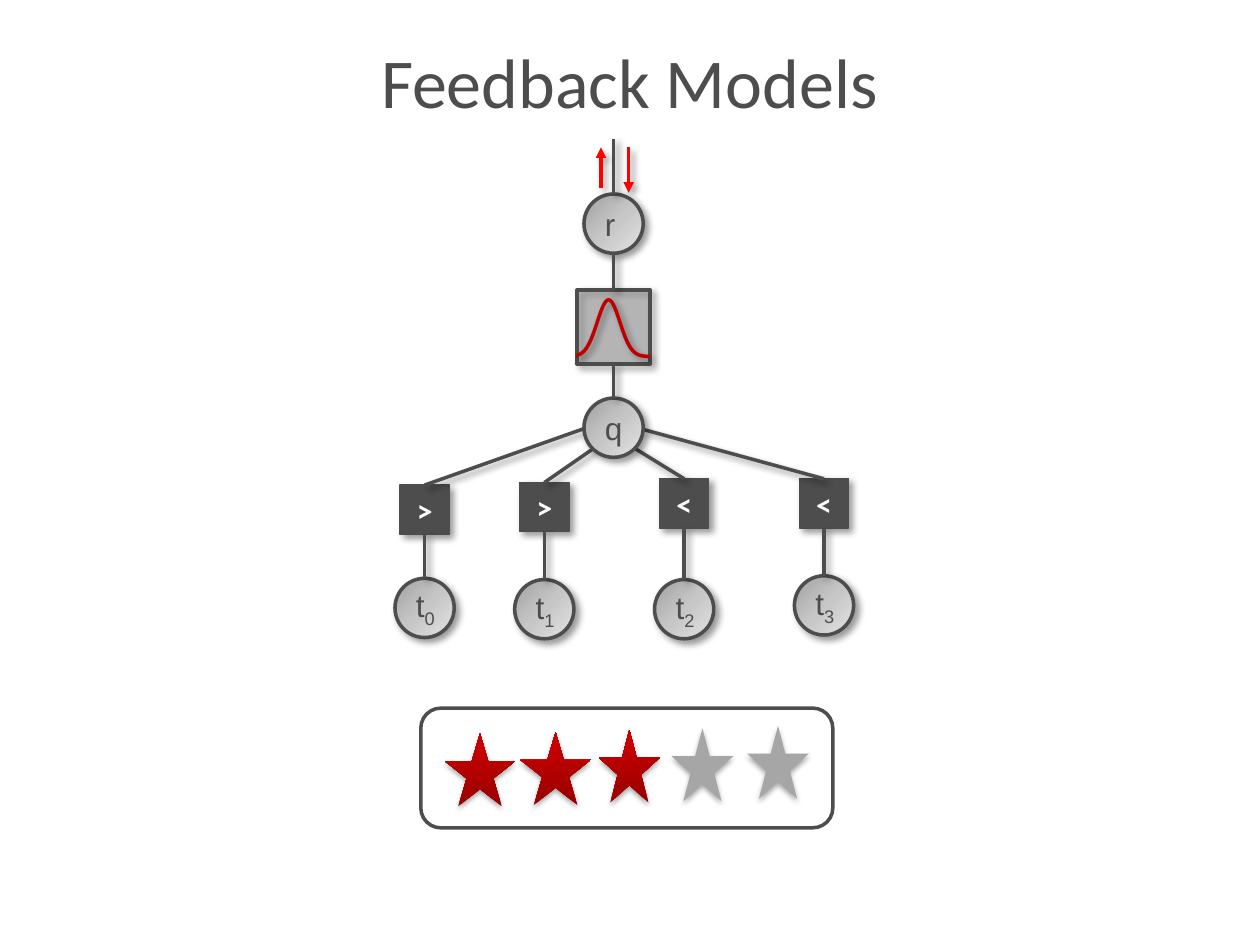
from math import exp

from lxml import etree
from pptx import Presentation
from pptx.dml.color import RGBColor
from pptx.enum.shapes import MSO_CONNECTOR, MSO_SHAPE
from pptx.enum.text import MSO_ANCHOR, PP_ALIGN
from pptx.oxml.ns import qn
from pptx.util import Inches, Pt

STRAIGHT = MSO_CONNECTOR.STRAIGHT
OVAL, BOX, STAR, PANEL = (MSO_SHAPE.OVAL, MSO_SHAPE.RECTANGLE,
                          MSO_SHAPE.STAR_5_POINT, MSO_SHAPE.ROUNDED_RECTANGLE)
LEFT, CENTER, MIDDLE = PP_ALIGN.LEFT, PP_ALIGN.CENTER, MSO_ANCHOR.MIDDLE
TOP, BOTTOM = 0, 2

# Content
TITLE = "Feedback Models"
# subscript, comparison, column centre, box top, circle top, line end at q
BRANCHES = [
    ("0", ">", 3.37, 3.85, 4.59, (4.64, 3.40)),
    ("1", ">", 4.32, 3.83, 4.60, (4.71, 3.56)),
    ("2", "<", 5.43, 3.80, 4.60, (5.04, 3.56)),
    ("3", "<", 6.54, 3.80, 4.57, (5.11, 3.41)),
]
# left, top, width, filled
STARS = [(3.53, 5.82, 0.56, True), (4.13, 5.81, 0.56, True), (4.75, 5.79, 0.49, True),
         (5.33, 5.78, 0.49, False), (5.93, 5.76, 0.49, False)]
# tip, tail end
MESSAGES = [((4.99, 1.53), (4.99, 1.17)), ((4.77, 1.17), (4.77, 1.49))]

# Look
DARK, WHITE, RED, CURVE, GREY = "4D4D4D", "FFFFFF", "FF0000", "C00000", "A6A6A6"
SILVER = ([(0, "A1A1A1"), (50, "C6C6C6"), (100, "E3E3E3")], 45)
CRIMSON = ([(0, "980000"), (80, "C60000"), (100, "C70000")], 270)
NODE_SHADOW = {"alpha": 40, "blur": 4, "distance": 3, "angle": 45}
STAR_SHADOW = {"alpha": 35, "blur": 3.1, "distance": 1.8, "angle": 90}
NODE_FONT = {"name": "Arial", "size": Pt(18)}
BOX_FONT = {"name": "Calibri", "size": Pt(18), "bold": True}
TITLE_FONT = {"name": "Calibri", "size": Pt(40)}
AXIS, CIRCLE, SQUARE, STAR_HEIGHT = 4.87, 0.47, 0.39, 0.58


def color(value):
    return RGBColor.from_string(value)


def add_child(parent, tag, **attributes):
    child = etree.SubElement(parent, qn(tag))
    for name, value in attributes.items():
        child.set(name, str(value))
    return child


def set_shadow(shape, alpha, blur, distance, angle):
    effects = add_child(shape._element.spPr, "a:effectLst")
    outer = add_child(effects, "a:outerShdw", blurRad=Pt(blur), dist=Pt(distance),
                      dir=angle * 60000, algn="tl", rotWithShape=0)
    shade = add_child(outer, "a:srgbClr", val="000000")
    add_child(shade, "a:alpha", val=alpha * 1000)


def set_gradient(shape, stops, angle):
    shape.fill.gradient()
    shape.fill.gradient_angle = 360 - angle
    stop_list = shape._element.spPr.find(".//" + qn("a:gsLst"))
    for old in list(stop_list):
        stop_list.remove(old)
    for position, value in stops:
        stop = add_child(stop_list, "a:gs", pos=position * 1000)
        add_child(stop, "a:srgbClr", val=value)


def style_line(shape, value, weight=2):
    shape.line.color.rgb = color(value)
    shape.line.width = Pt(weight)


def style_shape(shape, fill=None, line=None, weight=2, shadow=None):
    if fill is None:
        shape.fill.background()
    elif isinstance(fill, tuple):
        set_gradient(shape, *fill)
    else:
        shape.fill.solid()
        shape.fill.fore_color.rgb = color(fill)
    if line:
        style_line(shape, line, weight)
    else:
        shape.line.fill.background()
    if shadow:
        set_shadow(shape, **shadow)
    else:
        shape.shadow.inherit = False
    return shape


def add_shape(shapes, kind, left, top, width, height, **style):
    shape = shapes.add_shape(kind, *map(Inches, (left, top, width, height)))
    return style_shape(shape, **style)


def write(shape, text, font, value, alignment, subscript=""):
    frame = shape.text_frame
    frame.vertical_anchor = MIDDLE
    paragraph = frame.paragraphs[0]
    paragraph.alignment = alignment
    for part in filter(None, (text, subscript)):
        run = paragraph.add_run()
        run.text = part
        for name, setting in font.items():
            setattr(run.font, name, setting)
        run.font.color.rgb = color(value)
    if subscript:
        run._r.get_or_add_rPr().set("baseline", "-25000")


def add_circle(shapes, center, top, text, subscript=""):
    circle = add_shape(shapes, OVAL, center - CIRCLE / 2, top, CIRCLE, CIRCLE,
                       fill=SILVER, line=DARK, shadow=NODE_SHADOW)
    write(circle, text, NODE_FONT, DARK, LEFT, subscript)
    circle.text_frame.word_wrap = False
    return circle


def add_line(shapes, start, end, value=DARK, arrow=False, begin=None, finish=None):
    line = shapes.add_connector(STRAIGHT, *map(Inches, (*start, *end)))
    if begin:
        line.begin_connect(*begin)
    if finish:
        line.end_connect(*finish)
    style_line(line, value)
    if arrow:
        add_child(line.line._get_or_add_ln(), "a:headEnd", type="triangle")
    set_shadow(line, **NODE_SHADOW)


def add_rating(shapes):
    group = shapes.add_group_shape().shapes
    add_shape(group, PANEL, 3.34, 5.62, 3.27, 0.95, line=DARK)
    for left, top, width, filled in STARS:
        add_shape(group, STAR, left, top, width, STAR_HEIGHT,
                  fill=CRIMSON if filled else GREY, shadow=STAR_SHADOW)


def add_bell(shapes):
    group = shapes.add_group_shape().shapes
    factor = add_shape(group, BOX, 4.58, 2.30, 0.58, 0.59,
                       fill=DARK, line=DARK, shadow=NODE_SHADOW)
    tint = factor._element.spPr.find(qn("a:solidFill"))[0]
    add_child(tint, "a:alpha", val=30000)
    # Normal curve sampled across the box
    left, width, base, height, mean, deviation, steps = 4.57, 0.59, 2.83, 0.45, 4.83, 0.09, 60
    points = []
    for step in range(steps + 1):
        x = left + width * step / steps
        y = base - height * exp(-((x - mean) / deviation) ** 2 / 2)
        points.append((Inches(x), Inches(y)))
    builder = group.build_freeform(*points[0])
    builder.add_line_segments(points[1:], close=False)
    style_shape(builder.convert_to_shape(), line=CURVE, shadow=NODE_SHADOW)
    return factor


def main():
    presentation = Presentation()
    presentation.slide_width, presentation.slide_height = Inches(10), Inches(7.5)
    slide = presentation.slides.add_slide(presentation.slide_layouts[5])
    shapes = slide.shapes

    # Title
    title = shapes.title
    title.left, title.top, title.width, title.height = map(Inches, (0.58, 0.36, 8.83, 0.56))
    write(title, TITLE, TITLE_FONT, DARK, CENTER)

    add_rating(shapes)

    # Branches below q
    for subscript, comparison, center, box_top, circle_top, joint in BRANCHES:
        circle = add_circle(shapes, center, circle_top, "t", subscript)
        box = add_shape(shapes, BOX, center - SQUARE / 2, box_top, SQUARE, SQUARE,
                        fill=DARK, line=DARK, weight=0.75, shadow=NODE_SHADOW)
        write(box, comparison, BOX_FONT, WHITE, CENTER)
        box.text_frame.word_wrap = False
        add_line(shapes, (center, box_top), joint, begin=(box, TOP))
        add_line(shapes, (center, box_top + SQUARE), (center, circle_top),
                 begin=(box, BOTTOM), finish=(circle, TOP))

    # Trunk with its messages
    root = add_circle(shapes, AXIS, 1.54, "r")
    add_line(shapes, (AXIS, 1.54), (AXIS, 1.10), begin=(root, TOP))
    for tip, tail in MESSAGES:
        add_line(shapes, tip, tail, RED, arrow=True)
    query = add_circle(shapes, AXIS, 3.16, "q")
    factor = add_bell(shapes)
    add_line(shapes, (AXIS, 3.16), (AXIS, 2.89), begin=(query, TOP), finish=(factor, BOTTOM))
    add_line(shapes, (AXIS, 2.30), (AXIS, 2.01), begin=(factor, TOP))

    presentation.save("out.pptx")


if __name__ == "__main__":
    main()
